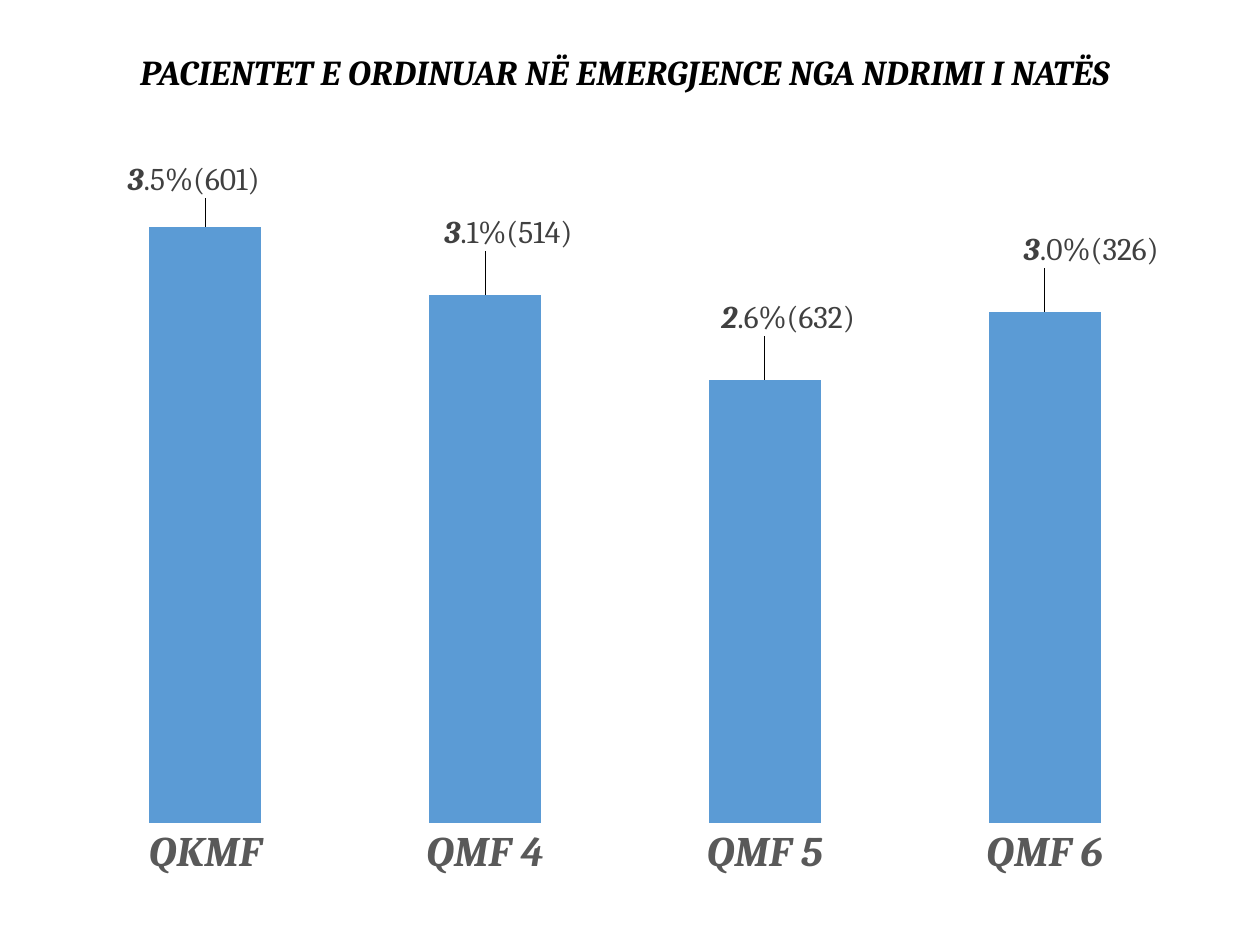
import pptx
import pptx.chart.data
import pptx.dml.color
import pptx.enum.chart
import pptx.enum.text
import pptx.oxml
import pptx.oxml.ns
import pptx.util
from pptx.util import Cm

HUES = {"title": "000000", "bar": "5B9BD5", "label": "404040", "axis": "595959"}
FACE = "Cambria"
# Category, value, label, label shift as a share of the chart
ROWS = [
    ("QKMF", 3.5, "3.5%(601)", (-0.01, -0.03)),
    ("QMF 4", 3.1, "3.1%(514)", (0.02, -0.05)),
    ("QMF 5", 2.6, "2.6%(632)", (0.02, -0.05)),
    ("QMF 6", 3.0, "3.0%(326)", (0.04, -0.05)),
]


def hue(name):
    return pptx.dml.color.RGBColor.from_string(HUES[name])


def style(font, size, name, bold=True):
    font.name = FACE
    font.size = pptx.util.Pt(size)
    font.bold = font.italic = bold
    font.color.rgb = hue(name)


def layout(pairs):
    """Make a manual chart layout from (tag, value) pairs."""
    parts = "".join(f'<c:{tag} val="{val}"/>' for tag, val in pairs)
    return pptx.oxml.parse_xml(
        f'<c:layout {pptx.oxml.ns.nsdecls("c")}>'
        f"<c:manualLayout>{parts}</c:manualLayout></c:layout>")


def add_title(slide, box):
    title = slide.shapes.title
    title.left, title.top, title.width, title.height = box
    frame = title.text_frame
    frame.text = "PACIENTET E ORDINUAR NË EMERGJENCE NGA NDRIMI I NATËS"
    frame.word_wrap = True
    frame.vertical_anchor = pptx.enum.text.MSO_ANCHOR.MIDDLE
    para = frame.paragraphs[0]
    para.alignment = pptx.enum.text.PP_ALIGN.CENTER
    para.line_spacing = 0.9
    style(para.font, 20, "title")


def add_labels(series):
    labels = series.data_labels
    labels.show_value = True
    labels.position = pptx.enum.chart.XL_LABEL_POSITION.OUTSIDE_END
    style(labels.font, 18, "label")
    for i, (_, _, text, _) in enumerate(ROWS):
        label = series.points[i].data_label
        para = label.text_frame.paragraphs[0]
        # The first digit alone is bold italic
        for part, bold in ((text[0], True), (text[1:], False)):
            run = para.add_run()
            run.text = part
            style(run.font, 18, "label", bold)
        label.position = pptx.enum.chart.XL_LABEL_POSITION.OUTSIDE_END


def add_bars(slide, box):
    data = pptx.chart.data.CategoryChartData()
    data.categories = [row[0] for row in ROWS]
    data.add_series("Series 1", [row[1] for row in ROWS])
    kind = pptx.enum.chart.XL_CHART_TYPE.COLUMN_CLUSTERED
    chart = slide.shapes.add_chart(kind, *box, data).chart
    chart.has_legend = chart.has_title = False
    chart.font.name = "Calibri"
    chart.font.size = pptx.util.Pt(10)

    # Axes
    axis = chart.category_axis
    axis.major_tick_mark = pptx.enum.chart.XL_TICK_MARK.NONE
    axis.format.line.fill.background()
    style(axis.tick_labels.font, 24, "axis")
    scale = chart.value_axis
    scale.minimum_scale, scale.maximum_scale = 0, 4
    scale.has_major_gridlines = False
    scale.visible = False

    # Bars and their labels
    plot = chart.plots[0]
    plot.gap_width = 150
    plot.vary_by_categories = False
    series = plot.series[0]
    series.format.fill.solid()
    series.format.fill.fore_color.rgb = hue("bar")
    add_labels(series)

    # Places of the labels and of the plot area
    root = chart.element if hasattr(chart, "element") else chart._chartSpace
    for item, row in zip(root.xpath(".//c:dLbl"), ROWS):
        item.insert(1, layout(zip("xy", row[3])))
    area = root.xpath(".//c:plotArea")[0]
    for old in area.xpath("./c:layout"):
        area.remove(old)
    area.insert(0, layout([
        ("layoutTarget", "inner"), ("xMode", "edge"), ("yMode", "edge"),
        ("x", 0.02), ("y", 0.02), ("w", 0.96), ("h", 0.89)]))


def main():
    deck = pptx.Presentation()
    deck.slide_width, deck.slide_height = Cm(25.4), Cm(19.05)
    slide = deck.slides.add_slide(deck.slide_layouts[5])
    add_title(slide, (Cm(0), Cm(0.64), Cm(25.2), Cm(1.7)))
    add_bars(slide, (Cm(0.85), Cm(2.54), Cm(23.5), Cm(15.45)))
    deck.save("out.pptx")


if __name__ == "__main__":
    main()
